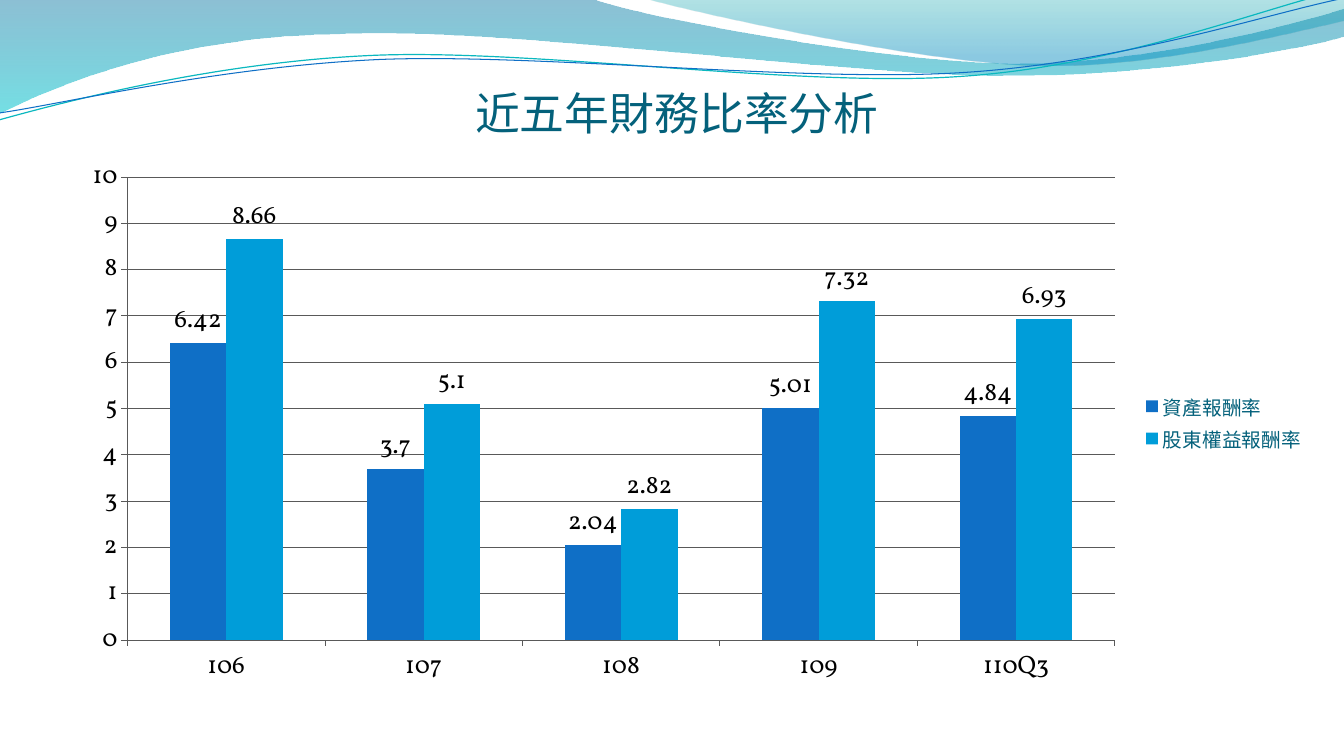
from dataclasses import dataclass
from math import cos, radians, sin
from typing import Any, Optional

from pptx import Presentation
from pptx.chart.data import CategoryChartData
from pptx.dml.color import RGBColor
from pptx.enum.chart import XL_CHART_TYPE as ChartType
from pptx.enum.chart import XL_LABEL_POSITION as LabelPosition
from pptx.enum.chart import XL_LEGEND_POSITION as LegendPosition
from pptx.enum.chart import XL_TICK_MARK as TickMark
from pptx.enum.text import MSO_ANCHOR as Anchor
from pptx.enum.text import PP_ALIGN as Align
from pptx.oxml.ns import qn
from pptx.util import Inches, Pt

CJK_FONT = "Noto Sans CJK SC"
NUMBER_FONT = "Vollkorn"
TITLE_COLOR = "04617B"
GRID_COLOR = "595959"
GRID_WIDTH = 0.5

Point = tuple[float, float]


@dataclass
class Stop:
    position: float
    color: str
    opacity: int


@dataclass
class Wave:
    """Segments of one point are straight, segments of three are Bézier curves."""
    start: Point
    segments: list[list[Point]]
    stops: Optional[list[Stop]] = None
    line_color: str = ""
    line_width: float = 0
    rotation: float = 0
    center: Point = (0, 0)


@dataclass
class Ratio:
    name: str
    values: list[float]
    color: str


WAVES = [
    Wave((0, 0), [
        [(5.87, -0.01)],
        [(6.34, 0.17), (8.85, 0.63), (10.11, 0.63)],
        [(11.38, 0.63), (12.78, 0.26), (13.33, 0.09)],
        [(13.35, 0.36)],
        [(13.11, 0.44), (11.6, 0.76), (9.94, 0.75)],
        [(8.29, 0.75), (5.09, 0.28), (3.43, 0.34)],
        [(1.72, 0.36), (0.61, 0.83), (-0.01, 1.13)],
        [(0, 0)],
    ], stops=[Stop(0, "0074A1", 45), Stop(1, "00C6CF", 55)]),
    Wave((6.39, -0.01), [
        [(6.79, 0.11), (9.09, 0.62), (10.25, 0.65)],
        [(11.41, 0.69), (12.82, 0.32), (13.33, 0.21)],
        [(13.33, 0)],
        [(6.39, -0.01)],
    ], stops=[Stop(0, "00A1A9", 30), Stop(0.8, "008BBF", 45)]),
    Wave((-0.01, 1.19), [
        [(0.64, 1.01), (2.11, 0.62), (3.69, 0.55)],
        [(5.27, 0.48), (7.9, 0.87), (9.5, 0.76)],
        [(11.1, 0.66), (12.52, 0.08), (13.31, -0.1)],
    ], line_color="0AB8BF", line_width=0.85, rotation=-2.7, center=(6.65, 0.58)),
    Wave((0, 1.12), [
        [(0.63, 1.03), (2.18, 0.66), (3.78, 0.59)],
        [(5.37, 0.53), (7.96, 0.82), (9.55, 0.72)],
        [(11.15, 0.62), (12.55, 0.14), (13.34, -0.02)],
    ], line_color="0F6FC6", line_width=0.75, rotation=-2.7, center=(6.67, 0.59)),
]

YEARS = ["106", "107", "108", "109", "110Q3"]
RATIOS = [
    Ratio("資產報酬率", [6.42, 3.7, 2.04, 5.01, 4.84], "0F6FC6"),
    Ratio("股東權益報酬率", [8.66, 5.1, 2.82, 7.32, 6.93], "009DD9"),
]


def rgb(color: str) -> RGBColor:
    return RGBColor.from_string(color)


def set_all(target: Any, values: dict[str, Any]) -> None:
    for name, value in values.items():
        setattr(target, name, value)


def set_font(font: Any, name: str, size: float, color: str) -> None:
    set_all(font, {"name": name, "size": Pt(size), "bold": False})
    font.color.rgb = rgb(color)


def set_line(line: Any, color: str, width: float) -> None:
    line.color.rgb = rgb(color)
    line.width = Pt(width)


def add_east_asian_font(element: Any) -> None:
    for latin in list(element.iter(qn("a:latin"))):
        latin.addnext(latin.makeelement(qn("a:ea"), {"typeface": latin.get("typeface")}))


def level(point: Point, wave: Wave) -> tuple[int, int]:
    """Point of the wave before its shape is rotated."""
    angle = radians(-wave.rotation)
    x, y = point[0] - wave.center[0], point[1] - wave.center[1]
    return (Inches(wave.center[0] + x * cos(angle) - y * sin(angle)),
            Inches(wave.center[1] + x * sin(angle) + y * cos(angle)))


def bend_segments(shape: Any, segments: list[list[Point]]) -> None:
    """Join the three lines of each curved segment into one Bézier curve."""
    lines = iter(list(shape.element.iter(qn("a:lnTo"))))
    for segment in segments:
        group = [next(lines) for _ in segment]
        if len(group) == 1:
            continue
        curve = group[0].makeelement(qn("a:cubicBezTo"), {})
        group[0].addprevious(curve)
        for line in group:
            curve.append(line[0])
            line.getparent().remove(line)


def add_wave(slide: Any, wave: Wave) -> None:
    builder = slide.shapes.build_freeform(*level(wave.start, wave))
    points = [level(point, wave) for segment in wave.segments for point in segment]
    builder.add_line_segments(points, close=wave.stops is not None)
    shape = builder.convert_to_shape()
    bend_segments(shape, wave.segments)
    shape.rotation = wave.rotation
    shape.shadow.inherit = False
    if wave.stops is None:
        shape.fill.background()
        set_line(shape.line, wave.line_color, wave.line_width)
        return
    shape.line.fill.background()
    shape.fill.gradient()
    shape.fill.gradient_angle = 270
    for gradient_stop, stop in zip(shape.fill.gradient_stops, wave.stops):
        gradient_stop.position = stop.position
        gradient_stop.color.rgb = rgb(stop.color)
    for color, stop in zip(shape.element.spPr.iter(qn("a:srgbClr")), wave.stops):
        color.append(color.makeelement(qn("a:alpha"), {"val": str(stop.opacity * 1000)}))


def add_title(slide: Any, text: str) -> None:
    box = slide.shapes.add_textbox(Inches(1.84), Inches(0.77), Inches(9.75), Inches(0.61))
    set_all(box.text_frame, {
        "word_wrap": True, "vertical_anchor": Anchor.BOTTOM,
        "margin_left": 0, "margin_right": 0,
        "margin_top": Inches(0.05), "margin_bottom": 0,
    })
    paragraph = box.text_frame.paragraphs[0]
    paragraph.alignment = Align.CENTER
    run = paragraph.add_run()
    run.text = text
    set_font(run.font, CJK_FONT, 32, TITLE_COLOR)
    add_east_asian_font(box.element)


def add_ratio_chart(slide: Any) -> None:
    data = CategoryChartData()
    data.categories = YEARS
    for ratio in RATIOS:
        data.add_series(ratio.name, ratio.values)
    chart = slide.shapes.add_chart(
        ChartType.COLUMN_CLUSTERED, Inches(0.67), Inches(1.47),
        Inches(12.39), Inches(5.44), data).chart
    set_all(chart, {"has_title": False, "has_legend": True})
    set_font(chart.font, NUMBER_FONT, 18, "000000")
    # Legend
    set_all(chart.legend, {"position": LegendPosition.RIGHT, "include_in_layout": False})
    set_font(chart.legend.font, CJK_FONT, 14, TITLE_COLOR)
    add_east_asian_font(chart.legend._element)
    # Axes
    for axis in (chart.category_axis, chart.value_axis):
        set_all(axis, {"major_tick_mark": TickMark.OUTSIDE, "minor_tick_mark": TickMark.NONE})
        set_line(axis.format.line, GRID_COLOR, GRID_WIDTH)
    set_line(chart.value_axis.major_gridlines.format.line, GRID_COLOR, GRID_WIDTH)
    # Columns and their values
    plot = chart.plots[0]
    set_all(plot, {"gap_width": 150, "overlap": 0, "vary_by_categories": False})
    for series, ratio in zip(plot.series, RATIOS):
        series.format.fill.solid()
        series.format.fill.fore_color.rgb = rgb(ratio.color)
        set_all(series.data_labels, {"show_value": True, "position": LabelPosition.OUTSIDE_END})


presentation = Presentation()
set_all(presentation, {"slide_width": Inches(13.33), "slide_height": Inches(7.5)})
slide = presentation.slides.add_slide(presentation.slide_layouts[6])
for wave in WAVES:
    add_wave(slide, wave)
add_title(slide, "近五年財務比率分析")
add_ratio_chart(slide)
presentation.save("out.pptx")
